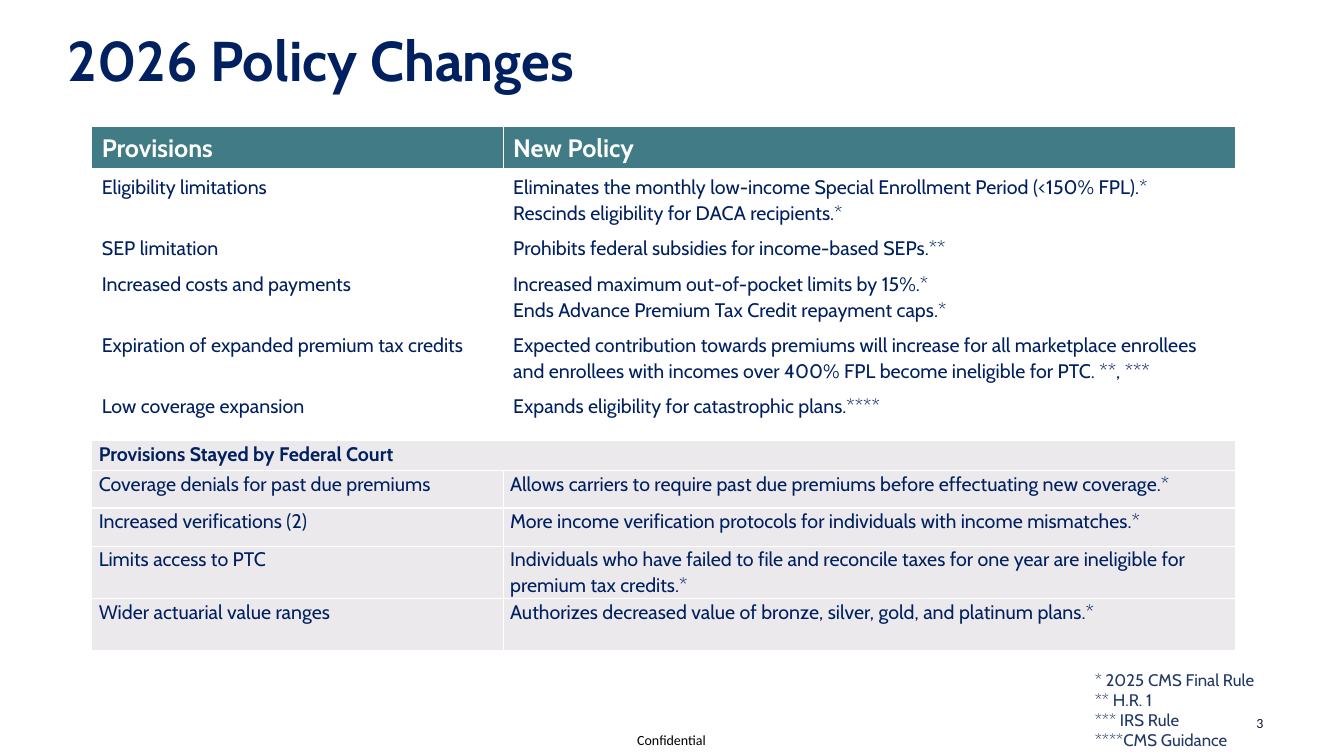
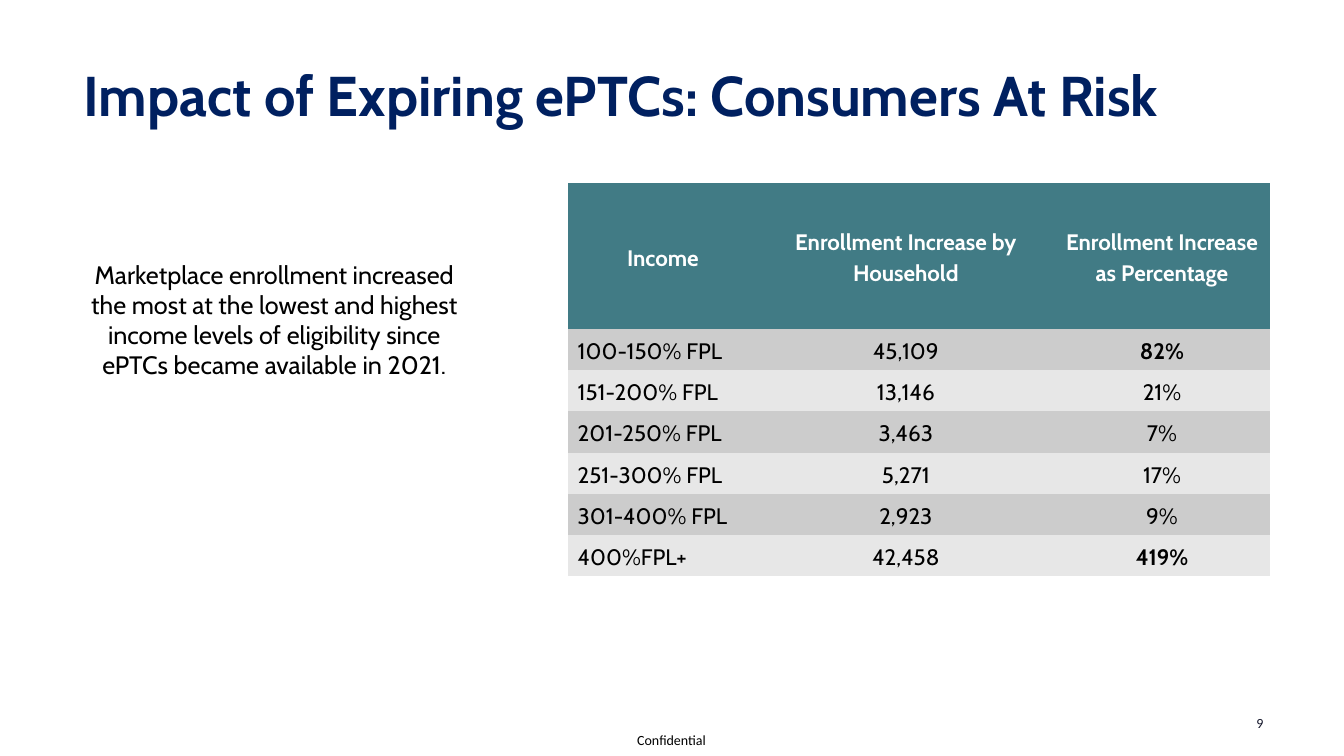
from dataclasses import dataclass, replace

from lxml import etree
from pptx import Presentation
from pptx.dml.color import RGBColor
from pptx.enum import text
from pptx.oxml import ns
from pptx import util as u

PX = 9144  # EMU; 100 px to the inch
LEFT, CENTER = text.PP_ALIGN.LEFT, text.PP_ALIGN.CENTER
TOP, MIDDLE = text.MSO_ANCHOR.TOP, text.MSO_ANCHOR.MIDDLE
PLAIN_TABLE = "{2D5ABB26-0587-4C30-8999-92F81FD0307C}"


@dataclass(frozen=True)
class Type:
    size: int
    ink: str
    bold: bool = False
    font: str = "Cabin"


@dataclass(frozen=True)
class Theme:
    white: str = "FFFFFF"
    teal: str = "417B85"
    stayed: str = "EBE9EC"
    bands: tuple = ("CCCCCC", "E7E7E7")
    title: Type = Type(40, "002060", True)
    policy_head: Type = Type(18, "FFFFFF", True)
    policy: Type = Type(14, "002060")
    income_head: Type = Type(16, "FFFFFF", True)
    income: Type = Type(16, "000000")
    message: Type = Type(18, "000000")
    sources: Type = Type(12, "203864")
    number: Type = Type(10, "121429", font="Calibri")
    footer: Type = Type(10, "000000", font="Calibri")


@dataclass(frozen=True)
class Row:
    height: int
    cells: tuple
    fill: str
    type: Type
    aligns: tuple = (LEFT, LEFT, LEFT)
    bold_last: bool = False
    insets: tuple = (10, 5)


THEME = Theme()


class Deck:
    def __init__(self, theme):
        self.theme = theme
        self.prs = Presentation()
        self.prs.slide_width, self.prs.slide_height = 1333 * PX, 750 * PX

    def slide(self, title, at, number):
        layout = self.prs.slide_layouts.get_by_name("Title Only")
        self.current = self.prs.slides.add_slide(layout)
        heading = self.current.shapes.title
        heading.left, heading.top, heading.width, heading.height = (v * PX for v in at)
        self.set_frame(heading.text_frame, title, self.theme.title, (0, 5), anchor=MIDDLE)
        self.label(number, (1246, 702, 42, 30), self.theme.number, (0, 10), anchor=MIDDLE)
        self.label("Confidential", (632, 726, 72, 17), self.theme.footer, (0, 0))

    def set_frame(self, frame, content, style, insets, align=LEFT, anchor=TOP):
        frame.word_wrap = True
        frame.auto_size = text.MSO_AUTO_SIZE.NONE
        frame.vertical_anchor = anchor
        frame.margin_left = frame.margin_right = insets[0] * PX
        frame.margin_top = frame.margin_bottom = insets[1] * PX
        self.fill_text(frame, content, style, align)

    def fill_text(self, frame, content, style, align, spacing=None):
        frame.text = content
        for paragraph in frame.paragraphs:
            paragraph.alignment = align
            paragraph.line_spacing = spacing
            for run in paragraph.runs:
                run.font.name = style.font
                run.font.size = u.Pt(style.size)
                run.font.bold = style.bold
                run.font.color.rgb = RGBColor.from_string(style.ink)

    def label(self, content, at, style, insets=(10, 5), align=LEFT, anchor=TOP):
        box = self.current.shapes.add_textbox(*(v * PX for v in at))
        self.set_frame(box.text_frame, content, style, insets, align, anchor)

    def table(self, left, top, widths, rows, spacing, anchor=TOP, border=None):
        """Add a table; a row with a single cell spans all columns."""
        height = sum(row.height for row in rows)
        frame = self.current.shapes.add_table(
            len(rows), len(widths), left * PX, top * PX, sum(widths) * PX, height * PX)
        for style_id in frame.element.iter(ns.qn("a:tableStyleId")):
            style_id.text = PLAIN_TABLE
        grid = frame.table
        for column, width in zip(grid.columns, widths):
            column.width = width * PX
        for r, row in enumerate(rows):
            grid.rows[r].height = row.height * PX
            for c in range(len(widths)):
                cell = grid.cell(r, c)
                cell.fill.solid()
                cell.fill.fore_color.rgb = RGBColor.from_string(row.fill)
                cell.vertical_anchor = anchor
                cell.margin_left = cell.margin_right = row.insets[0] * PX
                cell.margin_top = cell.margin_bottom = row.insets[1] * PX
            for c, content in enumerate(row.cells):
                last = c == len(widths) - 1
                style = replace(row.type, bold=row.type.bold or row.bold_last and last)
                self.fill_text(grid.cell(r, c).text_frame, content, style,
                               row.aligns[c], spacing)
            if len(row.cells) == 1:
                grid.cell(r, 0).merge(grid.cell(r, len(widths) - 1))
        if border:
            self.rule_cells(frame, border)

    def rule_cells(self, frame, color):
        """Draw a 1 pt line on all four sides of every cell."""
        for properties in frame.element.iter(ns.qn("a:tcPr")):
            for place, side in enumerate(("lnL", "lnR", "lnT", "lnB")):
                line = etree.Element(ns.qn(f"a:{side}"), w=str(u.Pt(1)))
                solid = etree.SubElement(line, ns.qn("a:solidFill"))
                etree.SubElement(solid, ns.qn("a:srgbClr"), val=color)
                properties.insert(place, line)


def policy_changes(deck):
    theme = deck.theme
    deck.slide("2026 Policy Changes", (67, 25, 1200, 67), "3")
    active = (
        (57, "Eligibility limitations",
         "Eliminates the monthly low-income Special Enrollment Period (<150% FPL).*\n"
         "Rescinds eligibility for DACA recipients.*"),
        (33, "SEP limitation", "Prohibits federal subsidies for income-based SEPs.**"),
        (57, "Increased costs and payments",
         "Increased maximum out-of-pocket limits by 15%.*\n"
         "Ends Advance Premium Tax Credit repayment caps.*"),
        (57, "Expiration of expanded premium tax credits",
         "Expected contribution towards premiums will increase for all marketplace "
         "enrollees and enrollees with incomes over 400% FPL become ineligible for "
         "PTC. **, ***"),
        (52, "Low coverage expansion", "Expands eligibility for catastrophic plans.****"),
    )
    stayed = (
        (37, "Coverage denials for past due premiums",
         "Allows carriers to require past due premiums before effectuating new coverage.*"),
        (38, "Increased verifications (2)",
         "More income verification protocols for individuals with income mismatches.*"),
        (52, "Limits access to PTC",
         "Individuals who have failed to file and reconcile taxes for one year are "
         "ineligible for premium tax credits.*"),
        (52, "Wider actuarial value ranges",
         "Authorizes decreased value of bronze, silver, gold, and platinum plans.*"),
    )
    tight = (7, 0)
    rows = [Row(41, ("Provisions", "New Policy"), theme.teal, theme.policy_head)]
    rows += [Row(height, cells, theme.white, theme.policy) for height, *cells in active]
    rows.append(Row(30, ("Provisions Stayed by Federal Court",), theme.stayed,
                    replace(theme.policy, bold=True), insets=tight))
    rows += [Row(height, cells, theme.stayed, theme.policy, insets=tight)
             for height, *cells in stayed]
    deck.table(91, 125, (408, 727), rows, spacing=1.07, border=theme.white)
    deck.label("* 2025 CMS Final Rule\n** H.R. 1\n*** IRS Rule\n****CMS Guidance",
               (1076, 659, 257, 91), theme.sources)


def consumers_at_risk(deck):
    theme = deck.theme
    deck.slide("Impact of Expiring ePTCs: Consumers At Risk", (83, 26, 1177, 134), "9")
    deck.label("Marketplace enrollment increased the most at the lowest and highest "
               "income levels of eligibility since ePTCs became available in 2021.",
               (83, 257, 378, 120), theme.message, (0, 0), CENTER)
    increases = (
        ("100-150% FPL", "45,109", "82%"),
        ("151-200% FPL", "13,146", "21%"),
        ("201-250% FPL", "3,463", "7%"),
        ("251-300% FPL", "5,271", "17%"),
        ("301-400% FPL", "2,923", "9%"),
        ("400%FPL+", "42,458", "419%"),
    )
    highlights = ("82%", "419%")
    rows = [Row(144, ("Income", "Enrollment Increase by Household",
                      "Enrollment Increase as Percentage"),
                theme.teal, theme.income_head, (CENTER,) * 3)]
    rows += [Row(41, cells, theme.bands[i % 2], theme.income, (LEFT, CENTER, CENTER),
                 bold_last=cells[-1] in highlights)
             for i, cells in enumerate(increases)]
    deck.table(563, 182, (189, 293, 215), rows, spacing=1.15, anchor=MIDDLE)


def main():
    deck = Deck(THEME)
    policy_changes(deck)
    consumers_at_risk(deck)
    deck.prs.save("out.pptx")


if __name__ == "__main__":
    main()
